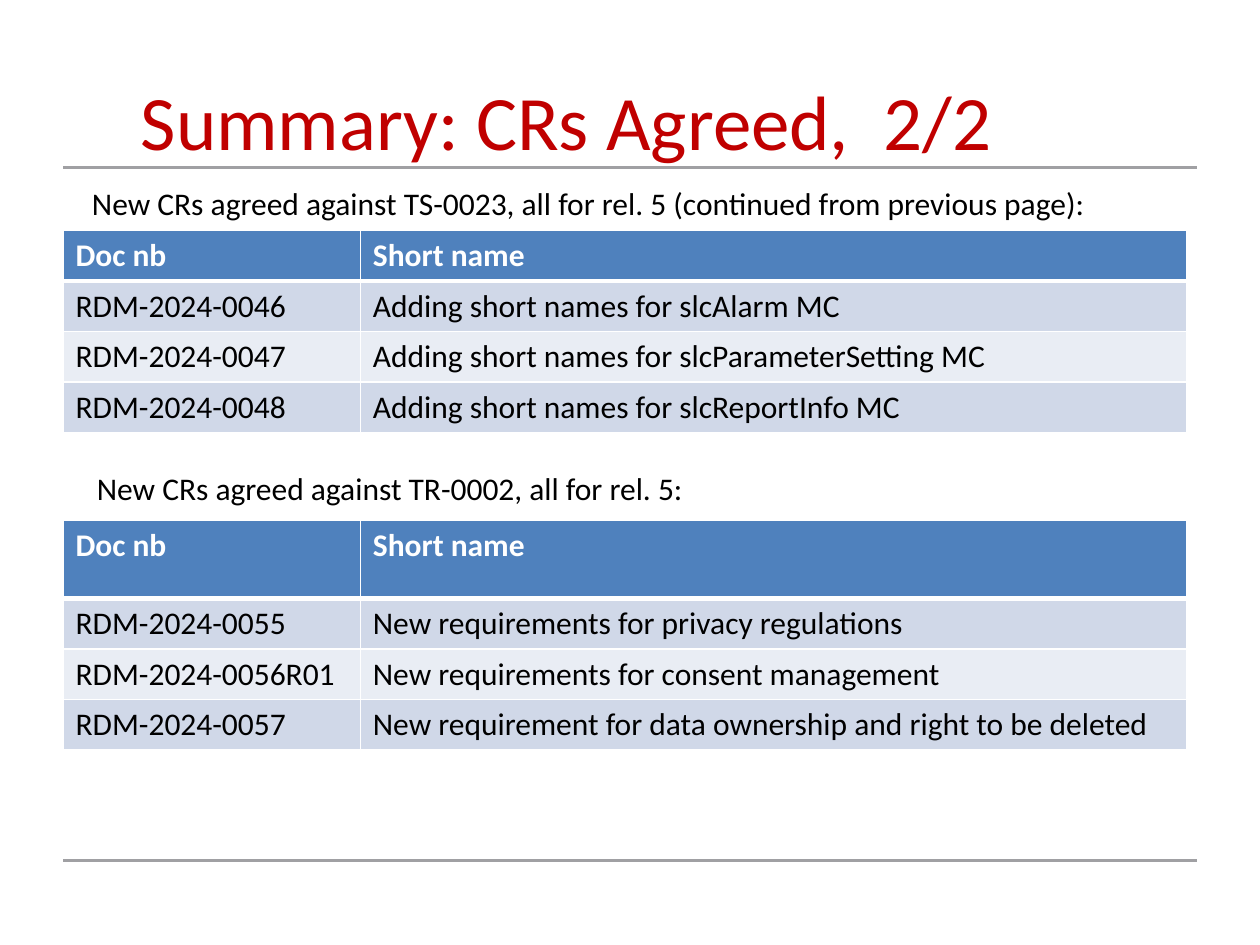
"""Build the summary slide of agreed CRs."""
from dataclasses import dataclass

from lxml import etree
from pptx import Presentation
from pptx.dml.color import RGBColor
from pptx.enum import shapes, text
from pptx.oxml import ns
from pptx import util as u


@dataclass(frozen=True)
class Theme:
    font: str = "Calibri"
    big: int = 44
    body: int = 18
    red: str = "C00000"
    black: str = "000000"
    white: str = "FFFFFF"
    rule: str = "A0A0A3"
    head: str = "4F81BD"
    bands: tuple = ("D0D8E8", "E9EDF4")


T = Theme()
TITLE = "Summary: CRs Agreed,  2/2"
HEAD = ("Doc nb", "Short name")
COLS = (2.36, 6.56)
LEFT, ROW = 0.5, 0.4
RULES = (6.83, 1.33)
NOTES = [
    ("New CRs agreed against TS-0023, all for rel. 5 (continued from previous page):",
     (0.54, 1.41, 8.27, 0.4), 0.19),
    ("New CRs agreed against TR-0002, all for rel. 5:",
     (0.67, 3.67, 4.91, 0.4), 0.1),
]
TABLES = [
    (1.83, 0.4, [
        ("RDM-2024-0046", "Adding short names for slcAlarm MC"),
        ("RDM-2024-0047", "Adding short names for slcParameterSetting MC"),
        ("RDM-2024-0048", "Adding short names for slcReportInfo MC"),
    ]),
    (4.13, 0.62, [
        ("RDM-2024-0055", "New requirements for privacy regulations"),
        ("RDM-2024-0056R01", "New requirements for consent management"),
        ("RDM-2024-0057", "New requirement for data ownership and right to be deleted"),
    ]),
]


def rgb(code):
    return RGBColor.from_string(code)


def write(frame, words, size, color, bold=False):
    para = frame.paragraphs[0]
    run = para.add_run()
    run.text = words
    font = run.font
    font.name, font.size, font.bold = T.font, u.Pt(size), bold
    font.color.rgb = rgb(color)
    return para


def add_box(slide, words, place, size, color, inset=0.1):
    frame = slide.shapes.add_textbox(*map(u.Inches, place)).text_frame
    frame.word_wrap = False
    frame.margin_left = u.Inches(inset)
    return frame, write(frame, words, size, color)


def add_rule(slide, top):
    y = u.Inches(top)
    line = slide.shapes.add_connector(
        shapes.MSO_CONNECTOR.STRAIGHT, u.Inches(0.5), y, u.Inches(9.5), y)
    line.line.color.rgb = rgb(T.rule)
    line.line.width = u.Pt(1.75)
    etree.SubElement(line._element.spPr, ns.qn("a:effectLst"))


def edge(cell, row):
    props = cell._tc.get_or_add_tcPr()
    thick = {(0, "B"), (1, "T")}
    for side in "LRTB":
        width = u.Pt(3 if (row, side) in thick else 1)
        line = etree.SubElement(props, ns.qn("a:ln" + side), w=str(width))
        fill = etree.SubElement(line, ns.qn("a:solidFill"))
        etree.SubElement(fill, ns.qn("a:srgbClr"), val=T.white)


def add_grid(slide, top, first, rows):
    data = [HEAD, *rows]
    highs = [first] + [ROW] * len(rows)
    place = (LEFT, top, sum(COLS), sum(highs))
    table = slide.shapes.add_table(
        len(data), len(COLS), *map(u.Inches, place)).table
    for col, wide in zip(table.columns, COLS):
        col.width = u.Inches(wide)
    for r, (high, items) in enumerate(zip(highs, data)):
        table.rows[r].height = u.Inches(high)
        head = r == 0
        for c, words in enumerate(items):
            cell = table.cell(r, c)
            edge(cell, r)
            cell.fill.solid()
            cell.fill.fore_color.rgb = rgb(T.head if head else T.bands[(r - 1) % 2])
            write(cell.text_frame, words, T.body, T.white if head else T.black, head)


def main():
    deck = Presentation()
    deck.slide_width, deck.slide_height = u.Inches(10), u.Inches(7.5)
    slide = deck.slides.add_slide(deck.slide_layouts[6])
    for top in RULES:
        add_rule(slide, top)
    frame, para = add_box(slide, TITLE, (0, 0.5, 9, 1.25), T.big, T.red)
    frame.word_wrap = True
    frame.margin_top = u.Inches(0.08)
    para.alignment = text.PP_ALIGN.CENTER
    for grid in TABLES:
        add_grid(slide, *grid)
    for words, place, inset in NOTES:
        add_box(slide, words, place, T.body, T.black, inset)
    deck.save("out.pptx")


if __name__ == "__main__":
    main()
